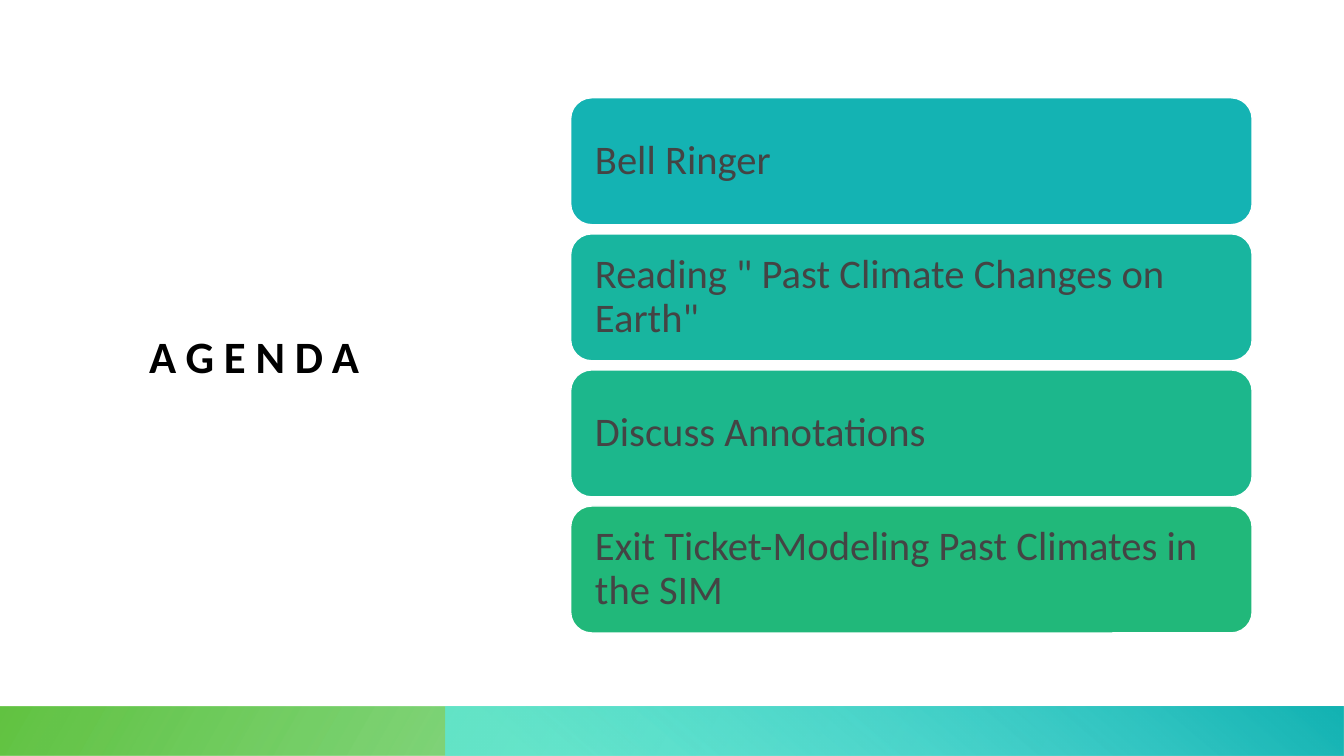
import pptx
import pptx.util
import pptx.dml.color
import pptx.enum.shapes
import pptx.enum.text
import pptx.oxml
import pptx.oxml.ns

TITLE = "AGENDA"
AGENDA = [
    ("Bell Ringer", "14B3B3"),
    ('Reading " Past Climate Changes on Earth"', "18B59F"),
    ("Discuss Annotations", "1CB78C"),
    ("Exit Ticket-Modeling Past Climates in the SIM", "21B87A"),
]
# Footer bands: left edge as share of width, rotation, angle,
# stops (position %, colour, opacity %)
BANDS = [
    (0, 180, 150, [(14, "15BC31", 28), (100, "47B921", 85)]),
    (0.3315, 0, 230, [(9, "57ECEC", 68), (99, "14B3B3", 100)]),
]
FONT = "Calibri"
WIDTH, HEIGHT = 13.33, 7.5
BAND_TOP = 7.01
CARD_LEFT, CARD_TOP = 5.66, 0.97
CARD_WIDTH, CARD_HEIGHT, CARD_PITCH = 6.76, 1.26, 1.35
CARD_INSET = 0.18

Inches = pptx.util.Inches
Shape = pptx.enum.shapes.MSO_SHAPE


def color(hex_code):
    return pptx.dml.color.RGBColor.from_string(hex_code)


def add_box(slide, kind, left, top, width, height):
    box = slide.shapes.add_shape(kind, *map(Inches, (left, top, width, height)))
    box.shadow.inherit = False
    return box


def write(shape, text, size, hex_code, inset, bold=False):
    frame = shape.text_frame
    frame.word_wrap = True
    frame.auto_size = pptx.enum.text.MSO_AUTO_SIZE.NONE
    frame.vertical_anchor = pptx.enum.text.MSO_ANCHOR.MIDDLE
    frame.margin_left = frame.margin_right = Inches(inset)
    frame.margin_top = frame.margin_bottom = Inches(inset)
    paragraph = frame.paragraphs[0]
    paragraph.alignment = pptx.enum.text.PP_ALIGN.LEFT
    paragraph.line_spacing = 0.9
    run = paragraph.add_run()
    run.text = text
    run.font.name = FONT
    run.font.size = pptx.util.Pt(size)
    run.font.bold = bold
    run.font.color.rgb = color(hex_code)
    return run


def fill_gradient(shape, angle, stops):
    stop_xml = "".join(
        f'<a:gs pos="{position * 1000}"><a:srgbClr val="{hex_code}">'
        f'<a:alpha val="{opacity * 1000}"/></a:srgbClr></a:gs>'
        for position, hex_code, opacity in stops
    )
    gradient = pptx.oxml.parse_xml(
        f'<a:gradFill {pptx.oxml.ns.nsdecls("a")} rotWithShape="1">'
        f'<a:gsLst>{stop_xml}</a:gsLst>'
        f'<a:lin ang="{angle * 60000}" scaled="0"/></a:gradFill>'
    )
    properties = shape.element.spPr
    properties.find(pptx.oxml.ns.qn("a:prstGeom")).addnext(gradient)
    properties.find(pptx.oxml.ns.qn("a:xfrm")).set("flipH", "1")


def main():
    deck = pptx.Presentation()
    deck.slide_width, deck.slide_height = Inches(WIDTH), Inches(HEIGHT)
    slide = deck.slides.add_slide(deck.slide_layouts[5])

    # Title, letter-spaced
    title = slide.shapes.title
    title.left, title.top = Inches(1.48), Inches(1.12)
    title.width, title.height = Inches(3.64), Inches(4.89)
    heading = write(title, TITLE, 32, "000000", 0, bold=True)
    heading.font._element.set("spc", "700")

    # Footer bands, each running to the right edge
    for share, rotation, angle, stops in BANDS:
        left = share * WIDTH
        band = add_box(slide, Shape.RECTANGLE, left, BAND_TOP,
                       WIDTH - left, HEIGHT - BAND_TOP)
        band.line.fill.background()
        band.rotation = rotation
        fill_gradient(band, angle, stops)

    # Agenda cards
    for row, (item, hex_code) in enumerate(AGENDA):
        card = add_box(slide, Shape.ROUNDED_RECTANGLE, CARD_LEFT,
                       CARD_TOP + row * CARD_PITCH, CARD_WIDTH, CARD_HEIGHT)
        card.fill.solid()
        card.fill.fore_color.rgb = color(hex_code)
        card.line.color.rgb = color("FFFFFF")
        card.line.width = pptx.util.Pt(1)
        write(card, item, 29, "444444", CARD_INSET)

    deck.save("out.pptx")


if __name__ == "__main__":
    main()
